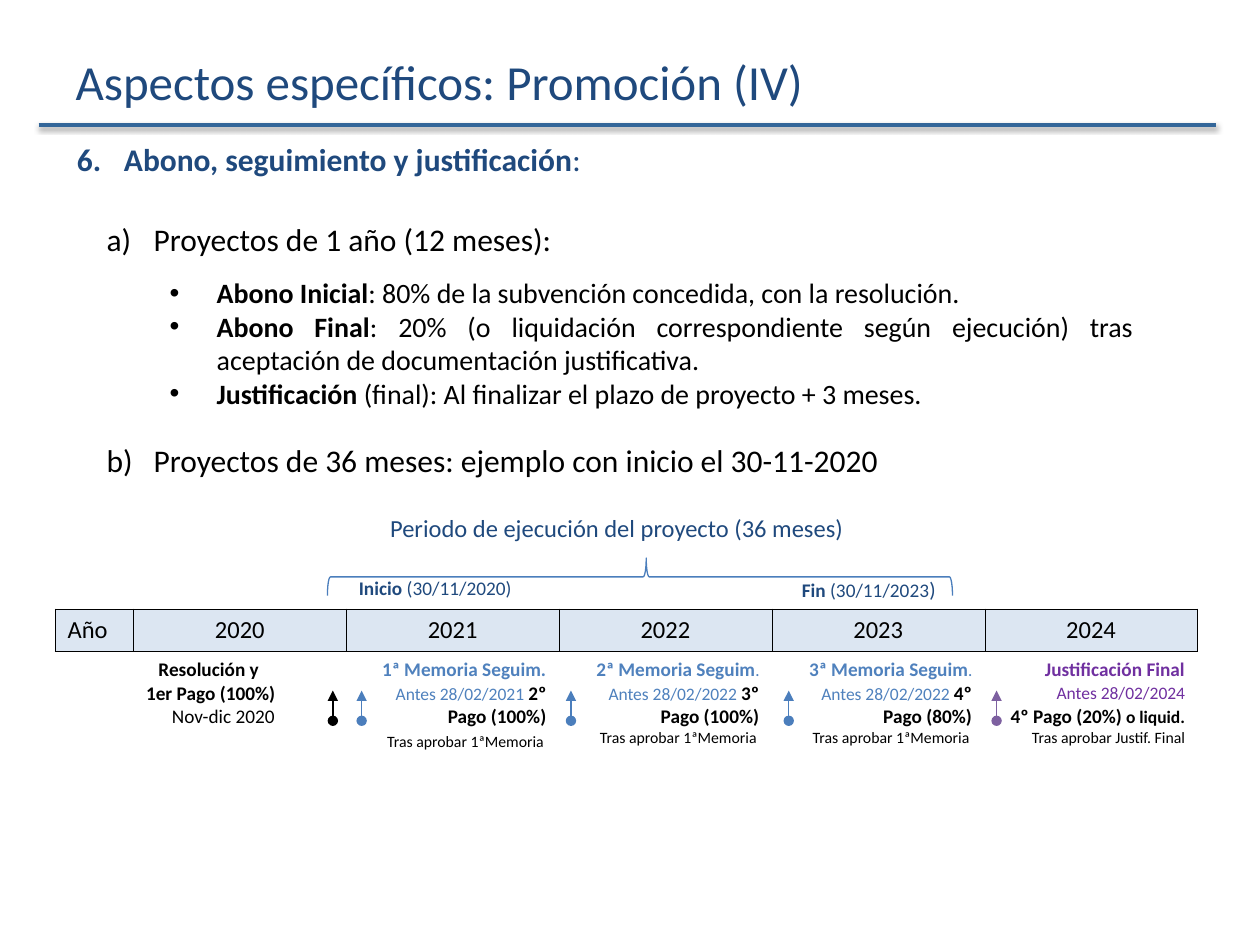
from dataclasses import dataclass

from lxml.etree import SubElement
from pptx import Presentation
from pptx.dml.color import RGBColor
from pptx.enum.shapes import MSO_CONNECTOR, MSO_SHAPE
from pptx.enum.text import MSO_ANCHOR, PP_ALIGN
from pptx.oxml import parse_xml
from pptx.oxml.ns import nsdecls, qn
from pptx.util import Cm, Pt


@dataclass(frozen=True)
class Theme:
    font: str = "Calibri"
    navy: str = "1F497D"
    rule: str = "336699"
    blue: str = "4F81BD"
    line: str = "4B7EBC"
    purple: str = "7030A0"
    violet: str = "7D60A0"
    black: str = "000000"
    year_fill: str = "DCE6F2"
    title: int = 28
    heading: int = 18
    body: int = 16
    year: int = 14
    end: int = 12
    label: int = 11
    date: int = 10
    note: int = 9
    dot: int = 8


T = Theme()


@dataclass(frozen=True)
class Run:
    text: str
    size: int = T.label
    color: str = T.black
    bold: bool = False


@dataclass(frozen=True)
class Para:
    runs: tuple[Run, ...]
    align: PP_ALIGN = PP_ALIGN.LEFT
    indent: float = 0  # cm
    hang: float = 0  # cm
    before: float = 0  # points
    bullet: str = ""
    number: tuple[str, int] | None = None  # scheme, first value


@dataclass(frozen=True)
class Arrow:
    x: float
    color: str


def write(tf, paras: list[Para]) -> None:
    for i, para in enumerate(paras):
        p = tf.paragraphs[0] if i == 0 else tf.add_paragraph()
        pPr = p._p.get_or_add_pPr()
        pPr.set("marL", str(Cm(para.indent)))
        pPr.set("indent", str(-Cm(para.hang)))
        if para.number:
            scheme, start = para.number
            SubElement(pPr, qn("a:buFont"), typeface="+mj-lt")
            SubElement(pPr, qn("a:buAutoNum"), type=scheme, startAt=str(start))
        elif para.bullet:
            SubElement(pPr, qn("a:buFont"), typeface="Arial")
            SubElement(pPr, qn("a:buChar"), char=para.bullet)
        for name, value in {"alignment": para.align, "space_before": Pt(para.before)}.items():
            setattr(p, name, value)
        for run in para.runs:
            r = p.add_run()
            r.text = run.text
            fmt = {"name": T.font, "size": Pt(run.size), "bold": run.bold}
            for name, value in fmt.items():
                setattr(r.font, name, value)
            r.font.color.rgb = RGBColor.from_string(run.color)


def add_text(s, x: float, y: float, h: float, paras: list[Para]) -> None:
    tf = s.shapes.add_textbox(Cm(x), Cm(y), Cm(21.2), Cm(h)).text_frame
    tf.word_wrap = True
    write(tf, paras)


def add_line(s, x1: float, y1: float, x2: float, y2: float, color: str, width: float):
    sp = s.shapes.add_connector(MSO_CONNECTOR.STRAIGHT, Cm(x1), Cm(y1), Cm(x2), Cm(y2))
    sp.line.color.rgb = RGBColor.from_string(color)
    sp.line.width = Pt(width)
    effects = SubElement(sp._element.spPr, qn("a:effectLst"))
    return sp, effects


def add_arrow(s, arrow: Arrow) -> None:
    sp, _ = add_line(s, arrow.x, 14.53, arrow.x, 13.92, arrow.color, 0.75)
    ln = sp.line._get_or_add_ln()
    SubElement(ln, qn("a:headEnd"), type="oval")
    SubElement(ln, qn("a:tailEnd"), type="triangle")


def box_cell(cell) -> None:
    tcPr = cell._tc.get_or_add_tcPr()
    for i, side in enumerate(("lnL", "lnR", "lnT", "lnB")):
        tcPr.insert(i, parse_xml(
            f'<a:{side} {nsdecls("a")} w="{Pt(0.25)}"><a:solidFill>'
            f'<a:srgbClr val="{T.black}"/></a:solidFill></a:{side}>'))


def heading(text: str, start: int) -> Para:
    return Para((Run(text, T.heading),), PP_ALIGN.JUSTIFY, 0.95, 0.95,
                number=("alphaLcParenR", start))


def item(lead: str, rest: str, before: float = 0) -> Para:
    runs = (Run(lead, T.body, bold=True), Run(rest, T.body))
    return Para(runs, PP_ALIGN.JUSTIFY, 2.22, 0.95, before, "•")


def report(name: str, dot: Run, date: str, payment: str, gap: float = 0) -> list[Para]:
    """Yearly follow-up report and the payment it releases."""
    return [
        Para((Run(name, color=T.blue, bold=True), dot), PP_ALIGN.RIGHT),
        Para((Run(f"Antes {date}", T.date, T.blue), Run(f" {payment}", bold=True)),
             PP_ALIGN.RIGHT),
        Para((Run("Tras aprobar 1ªMemoria", T.note),), indent=0.57, before=gap),
    ]


def add_timeline(s) -> None:
    heights = [0.92, 1.27, 0.76, 0.86, 2.49]
    widths = [1.58] + [4.29] * 5
    frame = s.shapes.add_table(len(heights), len(widths), Cm(1.11), Cm(9.32),
                               Cm(sum(widths)), Cm(sum(heights)))
    tbl = frame.table
    tbl.first_row = tbl.horz_banding = False
    # "No style, no grid" table style
    frame._element.find(".//" + qn("a:tableStyleId")).text = \
        "{2D5ABB26-0587-4C30-8999-92F81FD0307C}"
    for row, h in zip(tbl.rows, heights):
        row.height = Cm(h)
    for col, w in zip(tbl.columns, widths):
        col.width = Cm(w)
    for r1, c1, c2 in ((0, 0, 5), (1, 0, 5), (2, 0, 1), (2, 3, 4)):
        tbl.cell(r1, c1).merge(tbl.cell(r1, c2))

    # Execution period, start and end
    small_dot = Run(".", T.dot, T.blue, True)
    content = {
        (1, 0): [Para((Run("Periodo de ejecución del proyecto (36 meses)", T.year, T.navy),),
                      indent=6.5)],
        (2, 2): [Para((Run("Inicio ", color=T.navy, bold=True),
                       Run("(30/11/2020)", color=T.navy)))],
        (2, 3): [Para((Run("Fin ", color=T.navy, bold=True),
                       Run("(30/11/2023", color=T.navy), Run(")", T.end, T.navy)),
                      indent=4.64)],
        # Milestones under each year
        (4, 1): [Para((Run("Resolución y", bold=True),), indent=0.25),
                 Para((Run("1er Pago (100%)", bold=True),)),
                 Para((Run("Nov-dic 2020"),), indent=0.52)],
        (4, 2): report("1ª Memoria Seguim", Run(".", color=T.blue, bold=True),
                       "28/02/2021", "2º Pago (100%)", 2),
        (4, 3): report("2ª Memoria Seguim", small_dot, "28/02/2022", "3º Pago (100%)"),
        (4, 4): report("3ª Memoria Seguim", small_dot, "28/02/2022", "4º Pago (80%)"),
        (4, 5): [Para(runs, PP_ALIGN.RIGHT, before=gap) for runs, gap in (
            ((Run("Justificación Final", color=T.purple, bold=True),), 0),
            ((Run("Antes 28/02/2024", T.date, T.purple),), 1),
            ((Run("4º Pago (20%)", bold=True), Run(" o liquid.", T.date, bold=True)), 0),
            ((Run("Tras aprobar Justif. Final", T.note),), 0))],
    }
    for c, name in enumerate(("Año", "2020", "2021", "2022", "2023", "2024")):
        align = PP_ALIGN.CENTER if c else PP_ALIGN.LEFT
        content[3, c] = [Para((Run(name, T.year),), align)]

    for r in range(len(heights)):
        for c in range(len(widths)):
            cell = tbl.cell(r, c)
            if (r, c) in content:
                write(cell.text_frame, content[r, c])
            else:
                end = cell.text_frame.paragraphs[0]._p.get_or_add_endParaRPr()
                end.set("sz", str(T.date * 100))
            if r == 3:
                box_cell(cell)
                cell.fill.solid()
                cell.fill.fore_color.rgb = RGBColor.from_string(T.year_fill)
            else:
                cell.fill.background()


def main() -> None:
    prs = Presentation()
    prs.slide_width, prs.slide_height = Cm(25.4), Cm(19.05)
    s = prs.slides.add_slide(prs.slide_layouts[5])

    # Title and its rule
    _, effects = add_line(s, 0.78, 2.52, 24.51, 2.52, T.rule, 2)
    effects.append(parse_xml(
        f'<a:outerShdw {nsdecls("a")} blurRad="{Pt(3.1)}" dist="{Pt(1.6)}" dir="5400000" '
        f'rotWithShape="0"><a:srgbClr val="{T.black}"><a:alpha val="38000"/></a:srgbClr>'
        '</a:outerShdw>'))
    title = s.shapes.title
    box = {"left": Cm(1.27), "top": Cm(0.76), "width": Cm(22.86), "height": Cm(1.75)}
    for name, value in box.items():
        setattr(title, name, value)
    title.text_frame.vertical_anchor = MSO_ANCHOR.MIDDLE
    write(title.text_frame,
          [Para((Run("Aspectos específicos: Promoción (IV)", T.title, T.navy),))])

    # Section heading and lists
    add_text(s, 1.3, 2.69, 1.02, [
        Para((Run("Abono, seguimiento y justificación", T.heading, T.navy, True),
              Run(":", T.heading, T.navy)),
             PP_ALIGN.JUSTIFY, 0.95, 0.95, number=("arabicPeriod", 6))])
    add_text(s, 1.9, 4.32, 4.11, [
        heading("Proyectos de 1 año (12 meses):", 1),
        item("Abono Inicial", ": 80% de la subvención concedida, con la resolución.", 10),
        item("Abono Final", ": 20% (o liquidación correspondiente según ejecución) "
             "tras aceptación de documentación justificativa."),
        item("Justificación", " (final): Al finalizar el plazo de proyecto + 3 meses.")])
    add_text(s, 1.9, 8.76, 1.37,
             [heading("Proyectos de 36 meses: ejemplo con inicio el 30-11-2020", 2)])

    # Timeline with its brace and arrows
    add_timeline(s)
    brace = s.shapes.add_shape(MSO_SHAPE.LEFT_BRACE, Cm(12.52), Cm(5.33), Cm(0.76), Cm(12.6))
    brace.rotation = 90
    brace.adjustments[0], brace.adjustments[1] = 0.08, 0.49
    brace.shadow.inherit = False
    brace.fill.background()
    brace.line.color.rgb = RGBColor.from_string(T.line)
    brace.line.width = Pt(0.75)
    for arrow in (Arrow(6.71, T.black), Arrow(7.29, T.line), Arrow(11.51, T.line),
                  Arrow(15.9, T.line), Arrow(20.09, T.violet)):
        add_arrow(s, arrow)

    prs.save("out.pptx")


if __name__ == "__main__":
    main()
